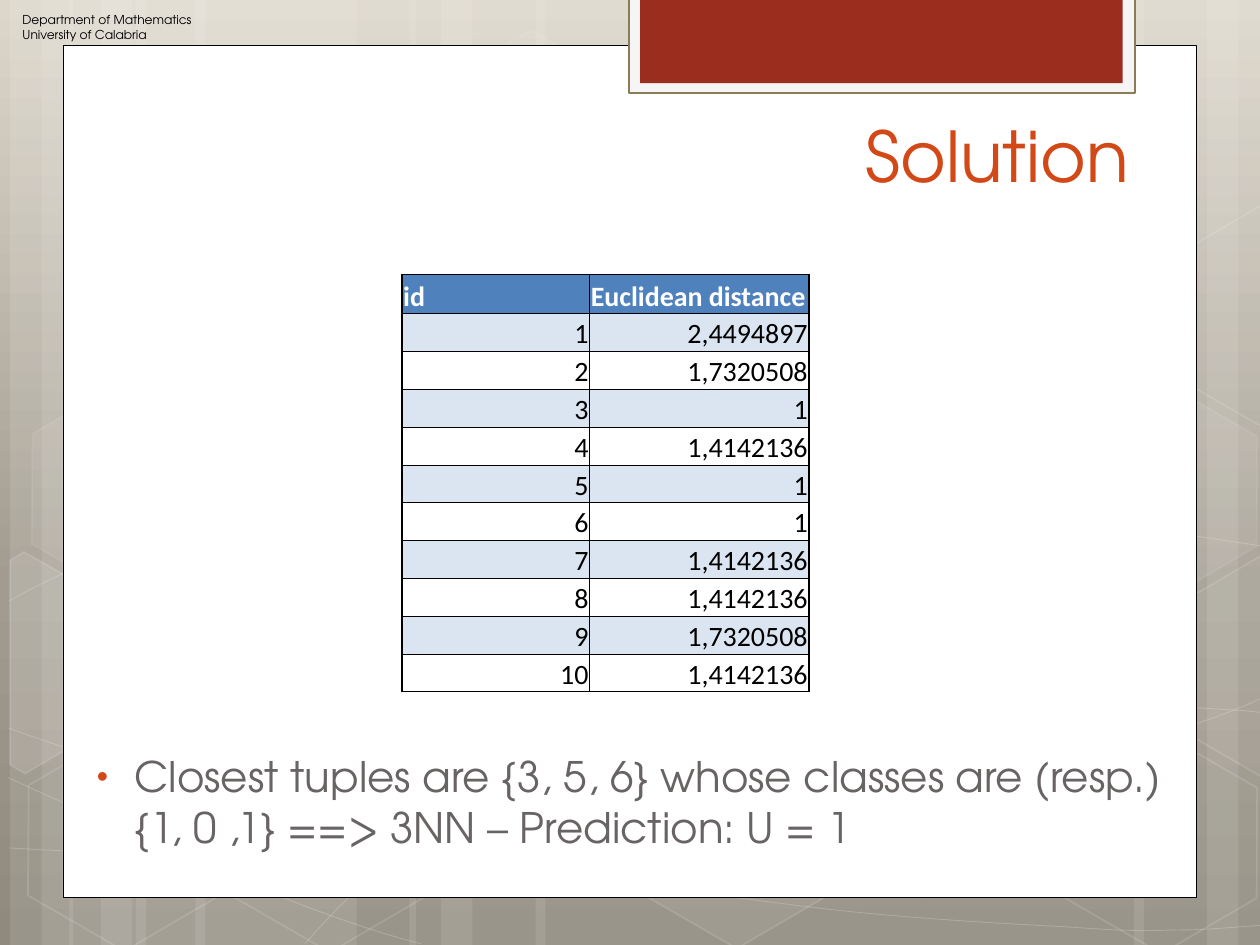
from copy import deepcopy
from lxml.etree import SubElement
from pptx import Presentation
from pptx.dml.color import RGBColor
from pptx.enum.shapes import MSO_SHAPE as Shape
from pptx.enum.text import MSO_ANCHOR as Anchor, MSO_AUTO_SIZE as Fit, PP_ALIGN as Align
from pptx.oxml import parse_xml
from pptx.oxml.ns import nsdecls, qn
from pptx.util import Inches, Pt

HUE = {
    "white": "FFFFFF", "black": "000000", "sand": "DDD7CB", "stone": "A29C90",
    "ash": "8F8A7D", "frame": "F5F5F5", "edge": "8B7B57", "brick": "9B2D1F",
    "title": "D34817", "body": "696464", "head": "4F81BD", "band": "DBE5F1",
}
RGB = {name: RGBColor.from_string(code) for name, code in HUE.items()}
SANS = "TeX Gyre Adventor"


def paint(shape, fill=None, line=None, width=1, clear=None, faint=None):
    """Set fill and line; clear and faint are their opacities in percent."""
    shape.shadow.inherit = False
    for part, hue, alpha in ((shape.fill, fill, clear), (shape.line.fill, line, faint)):
        if hue is None:
            part.background()
            continue
        part.solid()
        part.fore_color.rgb = RGB[hue]
        if alpha:
            props = shape._element.spPr
            root = props if part is shape.fill else props.find(qn("a:ln"))
            color = root.find(qn("a:solidFill")).find(qn("a:srgbClr"))
            SubElement(color, qn("a:alpha"), val=str(alpha * 1000))
    if line:
        shape.line.width = Pt(width)


def write(par, text, hue, **form):
    """Add a run with the given font values."""
    run = par.add_run()
    run.text = text
    for key, value in form.items():
        setattr(run.font, key, value)
    run.font.color.rgb = RGB[hue]


prs = Presentation()
prs.slide_width, prs.slide_height = Inches(10), Inches(7.5)
slide = prs.slides.add_slide(prs.slide_layouts[5])
shapes = slide.shapes

# Background gradient
back = slide.background.fill
back.gradient()
back.gradient_angle = 270
stops = next(slide._element.iter(qn("a:gsLst")))
stops.append(deepcopy(stops[-1]))
for stop, (hue, pos) in zip(back.gradient_stops, (("sand", 0), ("stone", 0.62), ("ash", 1))):
    stop.color.rgb = RGB[hue]
    stop.position = pos

# Pale stripes
for left, width in ((1.08, 1.75), (0.08, 0.5), (0.33, 0.83), (1.55, 1.75),
                    (0.55, 0.5), (0.8, 0.83), (7.33, 1.75), (9.58, 0.5),
                    (9, 0.83), (4.25, 3.08), (3.25, 0.5), (3.5, 0.83)):
    stripe = shapes.add_shape(Shape.RECTANGLE, Inches(left), 0, Inches(width), prs.slide_height)
    paint(stripe, "white", clear=10)

# Thin curves: a start point, then two controls and an end for each span
curves = (
    ((0.07, 6.73), (0.61, 6.76), (1.15, 6.79), (1.9, 6.78), (2.65, 6.77), (3.58, 6.75),
     (4.58, 6.65), (5.58, 6.55), (7, 6.36), (7.92, 6.17), (8.83, 5.98), (9.77, 5.68),
     (10.07, 5.51)),
    ((0.07, 4.77), (0.36, 4.61), (0.65, 4.46), (1.21, 4.31), (1.78, 4.16), (2.59, 3.94),
     (3.47, 3.87), (4.36, 3.8), (5.44, 3.79), (6.54, 3.87), (7.64, 3.95), (9.47, 4.26),
     (10.07, 4.34)),
    ((0.06, 6.17), (1.27, 6.72), (2.47, 7.27), (3.34, 7.49)),
    ((0.07, 5.78), (0.38, 5.89), (0.7, 6), (1.28, 6.16), (1.86, 6.31), (2.73, 6.56),
     (3.57, 6.73), (4.4, 6.9), (5.45, 7.08), (6.28, 7.18), (7.11, 7.29), (8, 7.33),
     (8.53, 7.36), (9.05, 7.4), (9.19, 7.38), (9.45, 7.38), (9.71, 7.37), (9.89, 7.35),
     (10.07, 7.34)),
    ((2.42, 7.49), (2.6, 7.29), (2.78, 7.09), (3.02, 6.91), (3.26, 6.73), (3.6, 6.53),
     (3.88, 6.39), (4.16, 6.25), (4.33, 6.19), (4.7, 6.09), (5.06, 5.99), (5.73, 5.85),
     (6.08, 5.78), (6.44, 5.71), (6.49, 5.71), (6.8, 5.69), (7.11, 5.66), (7.6, 5.63),
     (7.94, 5.62), (8.29, 5.61), (8.86, 5.62), (8.86, 5.62), (9.08, 5.62), (9.31, 5.62),
     (9.53, 5.62), (9.71, 5.63), (9.88, 5.64), (9.97, 5.65), (10.06, 5.66), (10.03, 5.65),
     (10.06, 5.66)),
)
for dots in curves:
    pen = shapes.build_freeform(*map(Inches, dots[0]))
    pen.add_line_segments([[Inches(n) for n in dot] for dot in dots[1:]], close=False)
    curve = pen.convert_to_shape()
    paint(curve, line="white", width=0.5, faint=20)
    # Each three straight steps become one Bézier span
    track = next(curve._element.iter(qn("a:path")))
    lines = track.findall(qn("a:lnTo"))
    for i in range(0, len(lines), 3):
        span = SubElement(track, qn("a:cubicBezTo"))
        for step in lines[i:i + 3]:
            span.append(step[0])
            track.remove(step)

# Hexagons: left, top, fill opacity, line opacity
for left, top, clear, faint in (
        (3.34, 0.36, 4, 8), (4.97, 5.89, 6, 12), (0.11, 5.91, 0, 12),
        (0.14, 3.12, 7, 8), (1.74, 5.92, 0, 12), (7.53, 4.53, 10, 12),
        (8.34, 5.93, 0, 12), (8.34, 3.14, 7, 8)):
    hexagon = shapes.add_shape(Shape.HEXAGON, *map(Inches, (left, top, 1.75, 1.52)))
    hexagon.rotation = 30
    hexagon.adjustments[0] = 0.285
    paint(hexagon, "white" if clear else None, "white", 1, clear, faint)

# Hexagons cut off by the slide's edges
for clear, corners in (
        (10, ((0.08, 4.45), (0.19, 4.38), (0.96, 4.82), (0.95, 5.7), (0.2, 6.14), (0.08, 6.07))),
        (4, ((9.26, 4.85), (10.01, 4.41), (10.09, 4.46), (10.09, 6.13), (10.02, 6.17), (9.26, 5.73))),
        (0, ((9.26, 2.07), (10.01, 1.63), (10.1, 1.68), (10.09, 3.35), (10.02, 3.39), (9.26, 2.95)))):
    pen = shapes.build_freeform(*map(Inches, corners[0]))
    pen.add_line_segments([[Inches(n) for n in dot] for dot in corners[1:]])
    paint(pen.convert_to_shape(), "white" if clear else None, "white", 1, clear, 12)

# White page and red tab
for box, fill, line, width in (
        ((0.5, 0.36, 9, 6.76), "white", "black", 0.5),
        ((4.99, -0.02, 4.02, 0.76), "frame", "edge", 1.25),
        ((5.08, -0.02, 3.83, 0.68), "brick", None, 0)):
    paint(shapes.add_shape(Shape.RECTANGLE, *map(Inches, box)), fill, line, width)

# Department name
frame = shapes.add_textbox(*map(Inches, (0.08, 0.05, 2.2, 0.34))).text_frame
frame.word_wrap = True
write(frame.paragraphs[0], "Department of Mathematics", "black", size=Pt(7), name=SANS)
write(frame.add_paragraph(), "University of Calabria", "black", size=Pt(7), name=SANS)

# Title, brought in front of the page
title = shapes.title
shapes._spTree.append(title._element)
title.left, title.top, title.width, title.height = map(Inches, (1.38, 0.84, 7.68, 1.25))
frame = title.text_frame
frame.auto_size, frame.vertical_anchor = Fit.NONE, Anchor.TOP
frame.paragraphs[0].alignment = Align.RIGHT
write(frame.paragraphs[0], "Solution", "title", size=Pt(40), name=SANS)

# Conclusion
frame = shapes.add_textbox(*map(Inches, (0.59, 5.91, 8.74, 1.23))).text_frame
frame.word_wrap = True
par = frame.paragraphs[0]
props = par._p.get_or_add_pPr()
props.set("marL", str(Inches(0.38)))
props.set("indent", str(Inches(-0.3)))
SubElement(SubElement(props, qn("a:buClr")), qn("a:srgbClr"), val=HUE["title"])
SubElement(props, qn("a:buSzPct"), val="76000")
SubElement(props, qn("a:buFont"), typeface="Arial")
SubElement(props, qn("a:buChar"), char="•")
write(par, "Closest tuples are {3, 5, 6} whose classes are (resp.) "
      "{1, 0 ,1} ==> 3NN – Prediction: U = 1", "body", size=Pt(24), name=SANS)

# Distance table
dists = ("2,4494897", "1,7320508", "1", "1,4142136", "1", "1",
         "1,4142136", "1,4142136", "1,7320508", "1,4142136")
rows = [("id", "Euclidean distance")] + [(str(i), d) for i, d in enumerate(dists, 1)]
last = len(rows) - 1
table = shapes.add_table(len(rows), 2, *map(Inches, (3.19, 2.18, 3.23, 3.31))).table
table.first_row = table.horz_banding = False
for col, width in zip(table.columns, (1.49, 1.74)):
    col.width = Inches(width)
for r, row in enumerate(rows):
    table.rows[r].height = Inches(0.3 if r else 0.31)
    for c, text in enumerate(row):
        cell = table.cell(r, c)
        for key, value in {"margin_left": Inches(0.01), "margin_right": Inches(0.01),
                           "margin_top": Inches(0.01), "margin_bottom": 0,
                           "vertical_anchor": Anchor.BOTTOM}.items():
            setattr(cell, key, value)
        if r % 2 or r == 0:
            cell.fill.solid()
            cell.fill.fore_color.rgb = RGB["band" if r else "head"]
        else:
            cell.fill.background()
        par = cell.text_frame.paragraphs[0]
        par.alignment = Align.RIGHT if r else Align.LEFT
        write(par, text, "black" if r else "white", size=Pt(16), name="Calibri", bold=r == 0)
        thick = {"L": r == 0 or c == 0, "R": r == 0 or c == 1,
                 "T": r <= 1, "B": r in (0, last)}
        for n, (side, bold) in enumerate(thick.items()):
            cell._tc.get_or_add_tcPr().insert(n, parse_xml(
                f'<a:ln{side} {nsdecls("a")} w="{Pt(1 if bold else 0.5)}"><a:solidFill>'
                f'<a:srgbClr val="{HUE["black"]}"/></a:solidFill></a:ln{side}>'))

prs.save("out.pptx")
